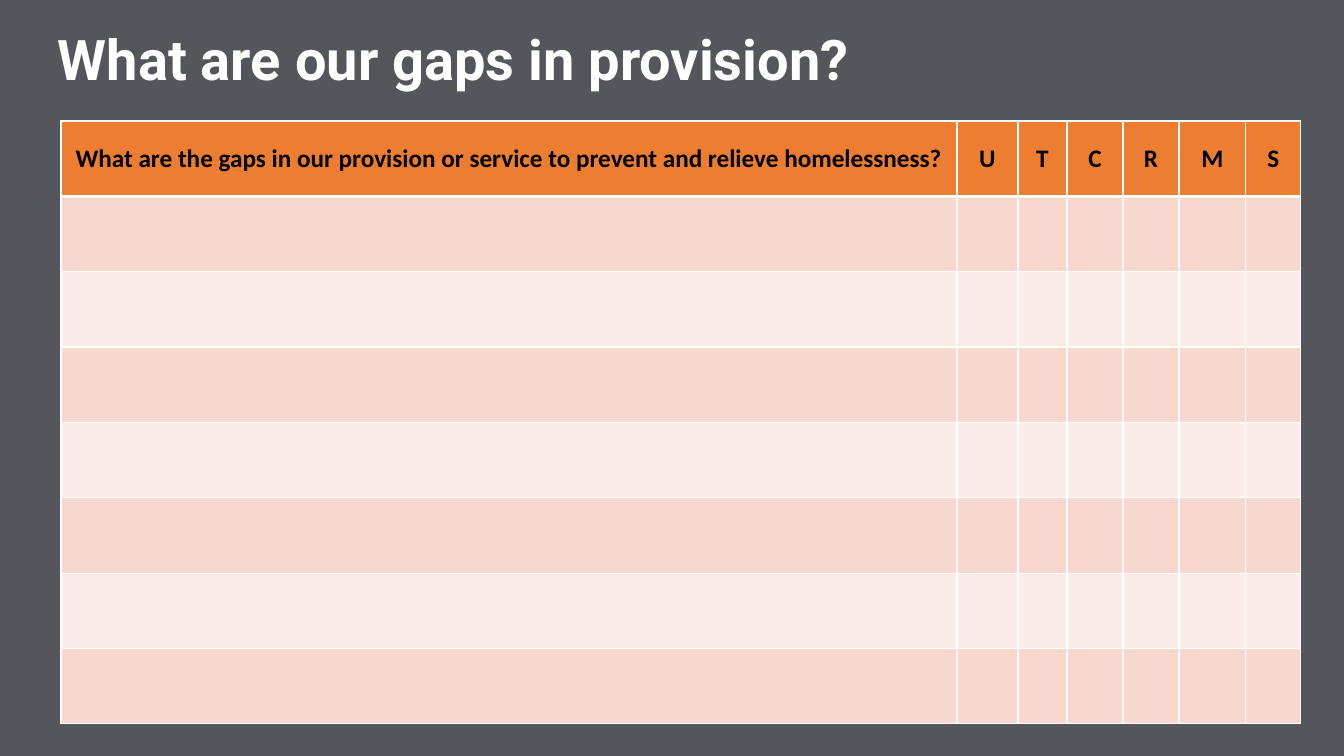
from lxml.etree import SubElement
from pptx import Presentation
from pptx.dml.color import RGBColor
from pptx.enum.text import MSO_ANCHOR, PP_ALIGN
from pptx.oxml.ns import qn
from pptx.util import Pt

# Content
TITLE = "What are our gaps in provision?"
HEADINGS = [
    "What are the gaps in our provision or service to prevent and relieve homelessness?",
    "U", "T", "C", "R", "M", "S",
]
EMPTY_ROWS = 7

# Layout in px
SLIDE_SIZE = (1344, 756)
TITLE_BOX = (48, 30, 978, 66)
TABLE_LEFT, TABLE_TOP, TABLE_HEIGHT = 61, 121, 603
COLUMN_WIDTHS = [896, 61, 49, 56, 56, 67, 55]
COLORS = {
    "background": "54565B",
    "white": "FFFFFF",
    "black": "000000",
    "header": "ED7D31",
    "dark band": "F8D7CE",
    "light band": "FCECE8",
}


def px(length):
    return round(length * 914400 / 100.8)


def color(name):
    return RGBColor.from_string(COLORS[name])


def write(frame, text, font, size, ink, anchor, align=PP_ALIGN.LEFT, spacing=None):
    frame.word_wrap = True
    frame.vertical_anchor = anchor
    paragraph = frame.paragraphs[0]
    paragraph.alignment = align
    paragraph.line_spacing = spacing
    run = paragraph.add_run()
    run.text = text
    run.font.name = font
    run.font.size = Pt(size)
    run.font.bold = True
    run.font.color.rgb = color(ink)


def style_cell(cell, fill, top, bottom):
    # Borders come before the fill in the cell properties
    properties = cell._tc.get_or_add_tcPr()
    for side, width in (("L", 1), ("R", 1), ("T", top), ("B", bottom)):
        border = SubElement(properties, qn(f"a:ln{side}"), w=str(Pt(width)))
        stroke = SubElement(border, qn("a:solidFill"))
        SubElement(stroke, qn("a:srgbClr"), val=COLORS["white"])
    cell.fill.solid()
    cell.fill.fore_color.rgb = color(fill)


def main():
    deck = Presentation()
    deck.slide_width, deck.slide_height = map(px, SLIDE_SIZE)
    slide = deck.slides.add_slide(deck.slide_layouts[6])
    slide.background.fill.solid()
    slide.background.fill.fore_color.rgb = color("background")

    # Gaps table
    row_count = 1 + EMPTY_ROWS
    gaps = slide.shapes.add_table(
        row_count, len(HEADINGS), px(TABLE_LEFT), px(TABLE_TOP),
        px(sum(COLUMN_WIDTHS)), px(TABLE_HEIGHT),
    ).table
    for column, width in zip(gaps.columns, COLUMN_WIDTHS):
        column.width = px(width)
    for index, row in enumerate(gaps.rows):
        row.height = px(TABLE_HEIGHT / row_count)
        band = "dark band" if index % 2 else "light band"
        for cell in row.cells:
            style_cell(cell, band if index else "header",
                       top=3 if index == 1 else 1, bottom=1 if index else 3)
    for cell, heading in zip(gaps.rows[0].cells, HEADINGS):
        cell.vertical_anchor = MSO_ANCHOR.MIDDLE
        write(cell.text_frame, heading, "Calibri", 18, "black",
              MSO_ANCHOR.MIDDLE, align=PP_ALIGN.CENTER)

    # Title
    title = slide.shapes.add_textbox(*map(px, TITLE_BOX))
    write(title.text_frame, TITLE, "Roboto", 40, "white",
          MSO_ANCHOR.BOTTOM, spacing=0.8)

    deck.save("out.pptx")


if __name__ == "__main__":
    main()
